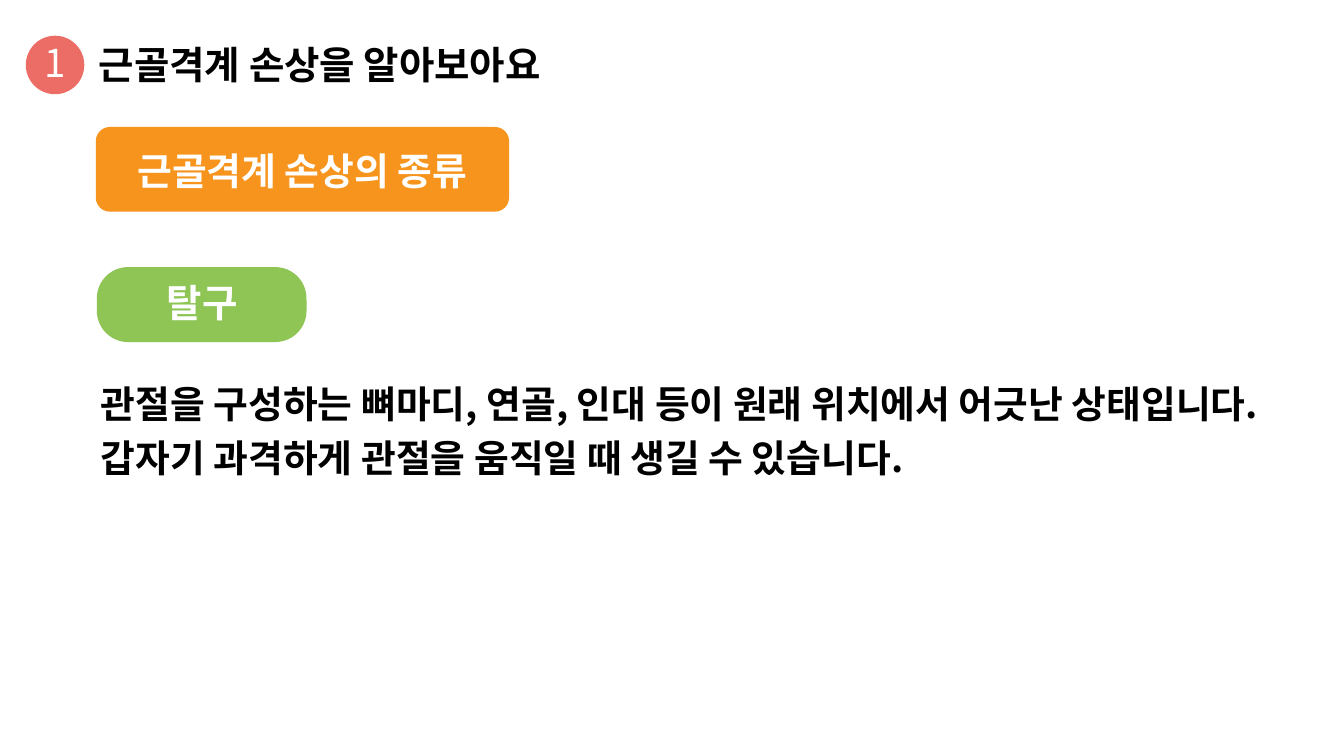
from lxml import etree
from pptx import Presentation
from pptx.dml.color import RGBColor
from pptx.enum import shapes, text
from pptx.oxml import ns
from pptx.util import Cm, Pt

FACE = "Noto Sans CJK KR"
BLACK = RGBColor(0, 0, 0)
WHITE = RGBColor(255, 255, 255)
CORAL = RGBColor(0xEC, 0x6D, 0x65)
AMBER = RGBColor(0xF7, 0x94, 0x1D)
GREEN = RGBColor(0x8E, 0xC5, 0x55)
OVAL = shapes.MSO_SHAPE.OVAL
ROUND = shapes.MSO_SHAPE.ROUNDED_RECTANGLE
MID = {"alignment": text.PP_ALIGN.CENTER}
GROW = {"auto_size": text.MSO_AUTO_SIZE.SHAPE_TO_FIT_TEXT}
TIGHT = dict.fromkeys(
    ("margin_left", "margin_top", "margin_right", "margin_bottom"), Cm(0.15))

LEFT = 4.83
HEAD = [
    {"at": (LEFT, 1.91, 38.25, 1.91), "say": "근골격계 손상을 알아보아요",
     "font": {"size": Pt(55), "bold": True}, "tint": BLACK, "box": TIGHT},
    {"at": (1.3, 1.8, 2.95, 2.95), "kind": OVAL, "fill": CORAL},
    {"at": (1.8, 2.06, 1.96, 2.41), "say": "1", "font": {"size": Pt(55)},
     "tint": WHITE, "para": {**MID, "line_spacing": 0.9},
     "box": {**TIGHT, **GROW, "vertical_anchor": text.MSO_ANCHOR.MIDDLE}},
]
TOPIC = [
    {"at": (LEFT, 6.4, 20.83, 4.27), "kind": ROUND, "fill": AMBER},
    {"at": (5.74, 7.29, 19, 2.49), "say": "근골격계 손상의 종류",
     "font": {"size": Pt(54), "bold": True}, "tint": WHITE,
     "para": MID, "box": TIGHT},
]
TERM = [
    {"at": (4.88, 13.46, 10.57, 3.78), "kind": ROUND, "fill": GREEN, "adj": 0.417},
    {"at": (LEFT, 13.92, 10.72, 2.9), "say": "탈구",
     "font": {"size": Pt(55), "bold": True}, "tint": WHITE,
     "para": MID, "box": TIGHT},
]
BODY = [
    {"at": (LEFT, 18.59, 59.79, 5.56),
     "say": "관절을 구성하는 뼈마디, 연골, 인대 등이 원래 위치에서 어긋난 "
            "상태입니다. 갑자기 과격하게 관절을 움직일 때 생길 수 있습니다.",
     "font": {"size": Pt(54), "bold": True}, "tint": BLACK,
     "para": {"line_spacing": 1.2}, "box": GROW},
]
PARTS = [(HEAD, True), (TOPIC, False), (TERM, True), (BODY, False)]


def style(obj, vals):
    for key, val in vals.items():
        setattr(obj, key, val)


def draw(tree, item):
    at = [Cm(n) for n in item["at"]]
    if "kind" in item:
        shape = tree.add_shape(item["kind"], *at)
        shape.shadow.inherit = False
        shape.fill.solid()
        shape.fill.fore_color.rgb = item["fill"]
        shape.line.fill.background()
        if "adj" in item:
            shape.adjustments[0] = item["adj"]
        return
    frame = tree.add_textbox(*at).text_frame
    style(frame, {"word_wrap": True, **item["box"]})
    para = frame.paragraphs[0]
    style(para, item.get("para", {}))
    run = para.add_run()
    run.text = item["say"]
    style(run.font, {"name": FACE, **item["font"]})
    run.font.color.rgb = item["tint"]
    props = run._r.get_or_add_rPr()
    etree.SubElement(props, ns.qn("a:ea"), typeface=FACE)


def main():
    deck = Presentation()
    deck.slide_width, deck.slide_height = Cm(67.74), Cm(38.1)
    slide = deck.slides.add_slide(deck.slide_layouts[6])
    for items, joined in PARTS:
        tree = slide.shapes.add_group_shape().shapes if joined else slide.shapes
        for item in items:
            draw(tree, item)
    deck.save("out.pptx")


if __name__ == "__main__":
    main()
